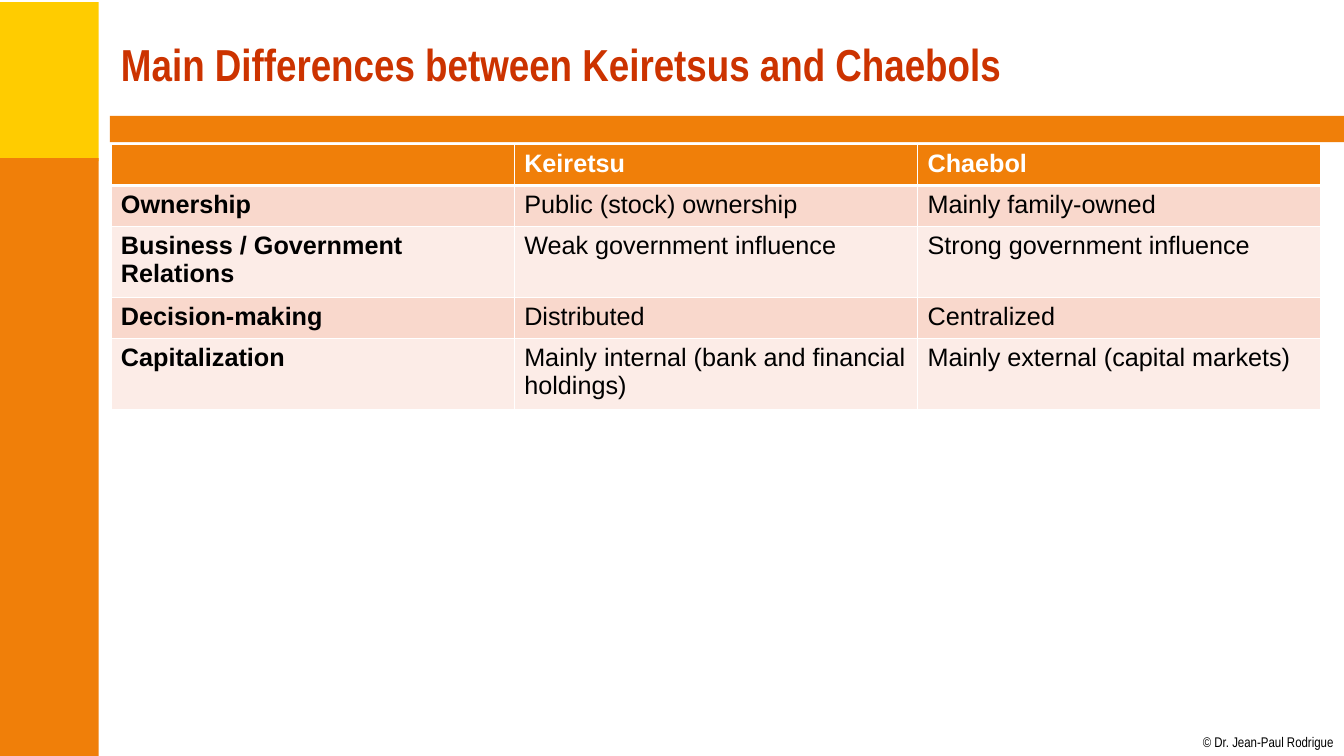
"""Build a slide comparing keiretsus and chaebols in a table."""
from lxml.etree import SubElement
from pptx import Presentation
from pptx.dml.color import RGBColor
from pptx.enum.shapes import MSO_SHAPE
from pptx.enum.text import MSO_ANCHOR, PP_ALIGN
from pptx.oxml.ns import qn
from pptx.util import Inches, Pt

TITLE = "Main Differences between Keiretsus and Chaebols"
CREDIT = "© Dr. Jean-Paul Rodrigue"
ROWS = [
    ("", "Keiretsu", "Chaebol"),
    ("Ownership", "Public (stock) ownership", "Mainly family-owned"),
    ("Business / Government Relations", "Weak government influence",
     "Strong government influence"),
    ("Decision-making", "Distributed", "Centralized"),
    ("Capitalization", "Mainly internal (bank and financial holdings)",
     "Mainly external (capital markets)"),
]
COLORS = {"gold": "FFCC00", "orange": "F07F09", "red": "CC3300", "dark": "F9D8CC",
          "light": "FCECE7", "white": "FFFFFF", "black": "000000"}
WIDE, HIGH = 13.33, 7.5
LEFT, SPAN, ROW = 1.1, 12, 0.41
BARS = [
    ("gold", -0.02, 0.02, 1, 1.58),
    ("orange", -0.02, 1.57, 1, HIGH - 1.57),
    ("orange", 1.09, 1.15, WIDE - 1.09, 0.26),
]


def color(name):
    return RGBColor.from_string(COLORS[name])


def style(par, face, size, tint, bold=False):
    for run in par.runs:
        font = run.font
        font.name, font.size, font.bold = face, Pt(size), bold
        font.color.rgb = color(tint)


def edge(cell, side, width):
    line = SubElement(cell._tc.get_or_add_tcPr(), qn(f"a:ln{side}"), w=str(Pt(width)))
    fill = SubElement(line, qn("a:solidFill"))
    SubElement(fill, qn("a:srgbClr"), val=COLORS["white"])


def add_bars(slide):
    for tint, *box in BARS:
        bar = slide.shapes.add_shape(MSO_SHAPE.RECTANGLE, *map(Inches, box))
        bar.shadow.inherit = False
        bar.fill.solid()
        bar.fill.fore_color.rgb = color(tint)
        bar.line.fill.background()


def add_title(slide):
    title = slide.shapes.title
    title.left, title.top = Inches(LEFT), Inches(0.11)
    title.width, title.height = Inches(SPAN), Inches(1.04)
    frame = title.text_frame
    frame.text = TITLE
    frame.vertical_anchor = MSO_ANCHOR.MIDDLE
    frame.paragraphs[0].alignment = PP_ALIGN.LEFT
    style(frame.paragraphs[0], "Arial Narrow", 32, "red", True)


def add_credit(slide):
    box = slide.shapes.add_textbox(*map(Inches, (11.93, 7.28, 1.31, 0.17)))
    frame = box.text_frame
    frame.margin_left = frame.margin_right = frame.margin_top = frame.margin_bottom = 0
    frame.word_wrap = False
    frame.text = CREDIT
    style(frame.paragraphs[0], "Arial Narrow", 10, "black")


def add_grid(slide):
    count = len(ROWS)
    box = map(Inches, (LEFT, 1.43, SPAN, ROW * count))
    table = slide.shapes.add_table(count, len(ROWS[0]), *box).table
    for r, row in enumerate(ROWS):
        for c, text in enumerate(row):
            cell = table.cell(r, c)
            for side in "LRTB":
                thick = (r, side) in ((0, "B"), (1, "T"))
                edge(cell, side, 3 if thick else 1)
            cell.fill.solid()
            band = "dark" if r % 2 else "light"
            cell.fill.fore_color.rgb = color(band if r else "orange")
            cell.text_frame.text = text
            style(cell.text_frame.paragraphs[0], "Arial", 18,
                  "black" if r else "white", r == 0 or c == 0)


def main():
    deck = Presentation()
    deck.slide_width, deck.slide_height = Inches(WIDE), Inches(HIGH)
    slide = deck.slides.add_slide(deck.slide_layouts[5])
    add_bars(slide)
    add_credit(slide)
    add_title(slide)
    add_grid(slide)
    deck.save("out.pptx")


if __name__ == "__main__":
    main()
